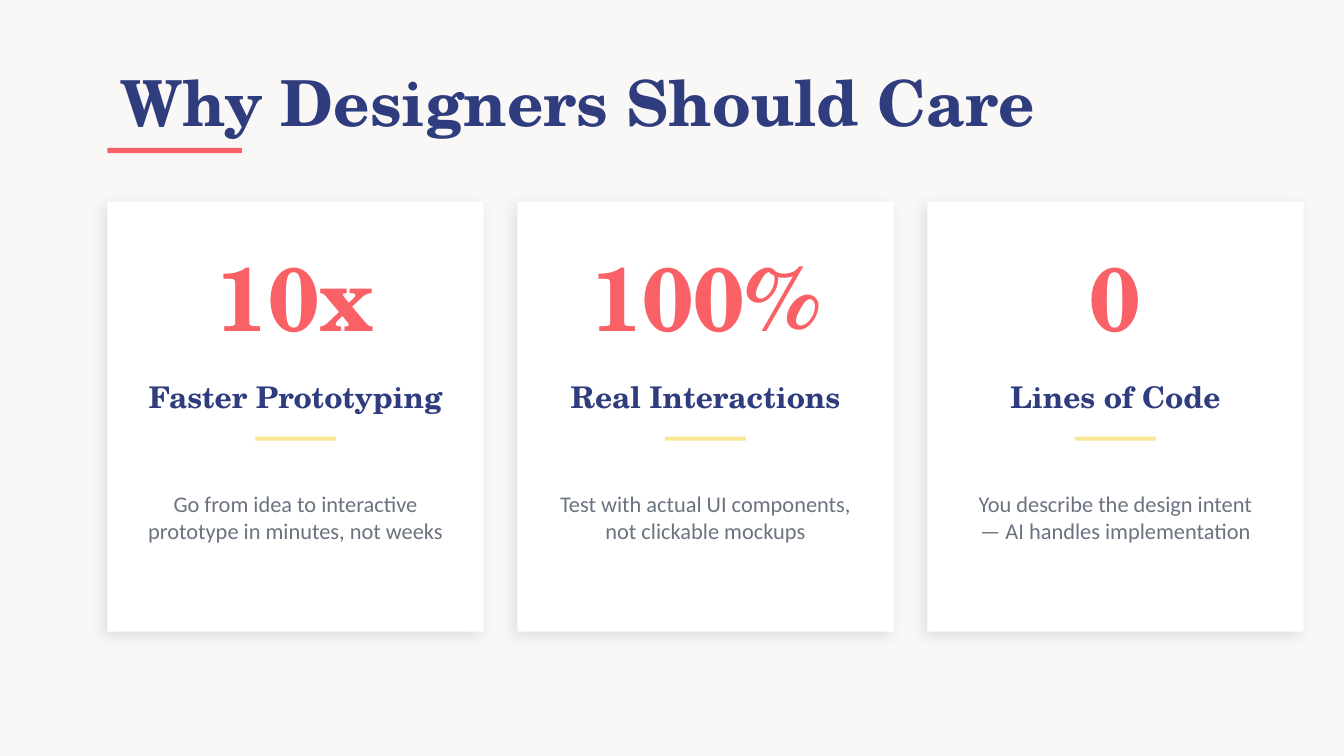
from lxml.etree import SubElement
from pptx import Presentation
from pptx.dml.color import RGBColor
from pptx.enum.shapes import MSO_SHAPE
from pptx.enum.text import MSO_ANCHOR, PP_ALIGN
from pptx.oxml.ns import qn
from pptx.util import Inches, Pt

COLORS = {
    "background": "FAF8F6",
    "navy": "2F3C7E",
    "coral": "F96167",
    "yellow": "F9E795",
    "gray": "6B7280",
    "white": "FFFFFF",
    "shadow": "000000",
}
SERIF = "TeX Gyre Schola"
SANS = "Calibri"

CARDS = [
    ("10x", "Faster Prototyping",
     "Go from idea to interactive prototype in minutes, not weeks"),
    ("100%", "Real Interactions",
     "Test with actual UI components, not clickable mockups"),
    ("0", "Lines of Code",
     "You describe the design intent — AI handles implementation"),
]
LEFT = 0.8
CARD_TOP = 1.5
CARD_WIDTH = 2.8
CARD_HEIGHT = 3.2
CARD_GAP = 0.25
PADDING = 0.2
RULE_WIDTH = 0.6


def rgb(name):
    return RGBColor.from_string(COLORS[name])


def add_rect(slide, left, top, width, height, color):
    sp = slide.shapes.add_shape(MSO_SHAPE.RECTANGLE, Inches(left), Inches(top),
                                Inches(width), Inches(height))
    sp.shadow.inherit = False
    sp.fill.solid()
    sp.fill.fore_color.rgb = rgb(color)
    sp.line.fill.background()
    return sp


def add_soft_shadow(sp):
    """Cast a faint blurred shadow towards the lower left."""
    effects = sp._element.spPr.find(qn("a:effectLst"))
    shadow = SubElement(effects, qn("a:outerShdw"), blurRad=str(Pt(8)),
                        dist=str(Pt(3)), dir=str(135 * 60000),
                        algn="bl", rotWithShape="0")
    color = SubElement(shadow, qn("a:srgbClr"), val=COLORS["shadow"])
    SubElement(color, qn("a:alpha"), val="10000")


def add_text(slide, text, left, top, width, height, size, color,
             font=SERIF, bold=True, align=PP_ALIGN.CENTER):
    box = slide.shapes.add_textbox(Inches(left), Inches(top),
                                   Inches(width), Inches(height))
    tf = box.text_frame
    tf.word_wrap = True
    tf.vertical_anchor = MSO_ANCHOR.MIDDLE
    p = tf.paragraphs[0]
    p.alignment = align
    r = p.add_run()
    r.text = text
    r.font.name = font
    r.font.size = Pt(size)
    r.font.bold = bold
    r.font.color.rgb = rgb(color)


def add_card(slide, left, figure, heading, description):
    card = add_rect(slide, left, CARD_TOP, CARD_WIDTH, CARD_HEIGHT, "white")
    add_soft_shadow(card)
    inner_left = left + PADDING
    inner_width = CARD_WIDTH - 2 * PADDING
    add_text(slide, figure, left, 1.7, CARD_WIDTH, 1, 48, "coral")
    add_text(slide, heading, inner_left, 2.7, inner_width, 0.5, 16, "navy")
    add_rect(slide, left + (CARD_WIDTH - RULE_WIDTH) / 2, 3.25,
             RULE_WIDTH, 0.03, "yellow")
    add_text(slide, description, inner_left, 3.4, inner_width, 0.9, 12, "gray",
             font=SANS, bold=False)


def main():
    prs = Presentation()
    prs.slide_width = Inches(10)
    prs.slide_height = Inches(5.625)
    s = prs.slides.add_slide(prs.slide_layouts[6])
    s.background.fill.solid()
    s.background.fill.fore_color.rgb = rgb("background")

    add_text(s, "Why Designers Should Care", LEFT, 0.4, 8, 0.7, 34, "navy",
             align=PP_ALIGN.LEFT)
    add_rect(s, LEFT, 1.1, 1, 0.04, "coral")
    for i, card in enumerate(CARDS):
        add_card(s, LEFT + i * (CARD_WIDTH + CARD_GAP), *card)

    prs.save("out.pptx")


if __name__ == "__main__":
    main()
